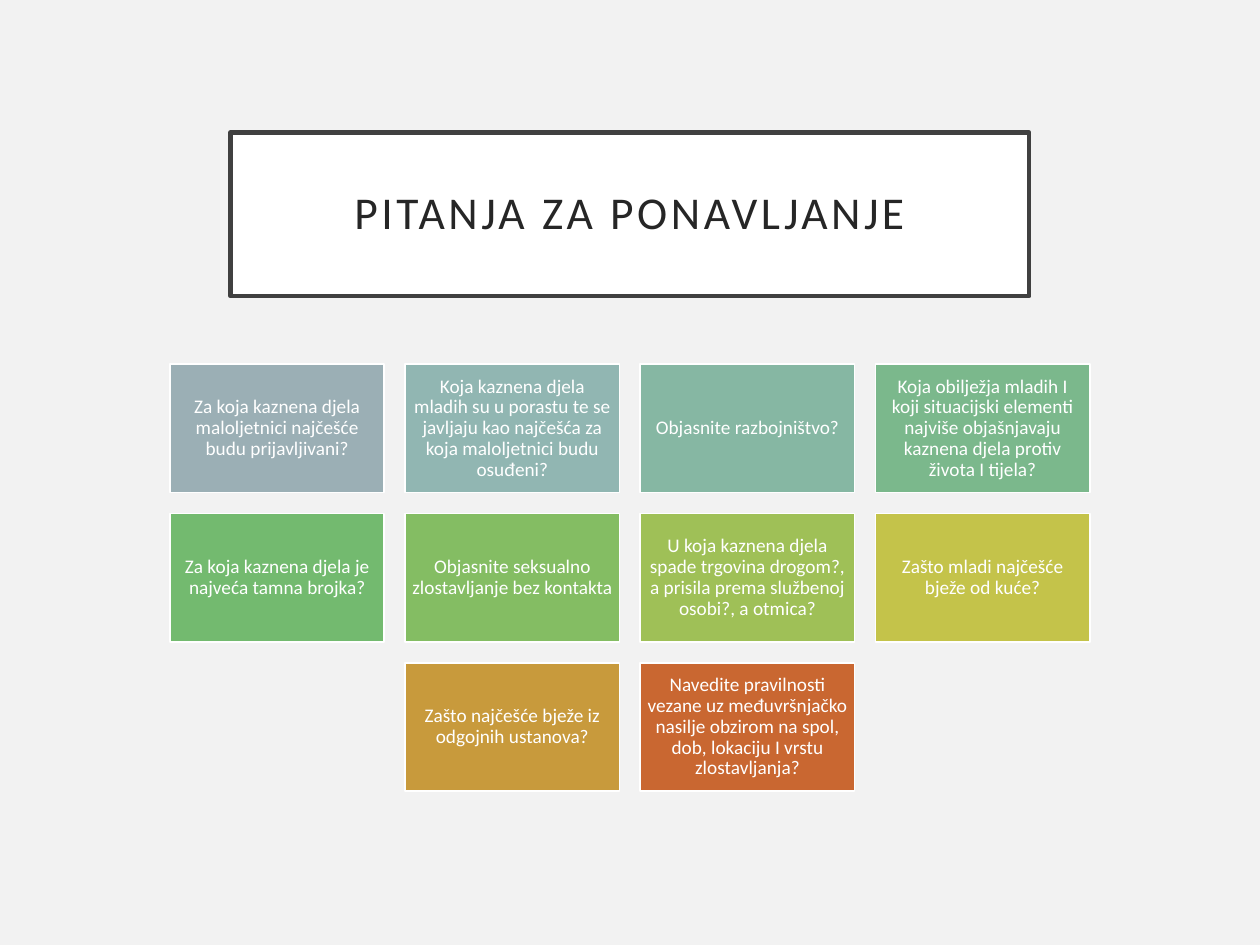
from pptx import Presentation
from pptx.dml.color import RGBColor
from pptx.enum.shapes import MSO_SHAPE
from pptx.enum.text import MSO_ANCHOR, MSO_AUTO_SIZE, PP_ALIGN
from pptx.util import Cm, Pt

RECT = MSO_SHAPE.RECTANGLE
MIDDLE = MSO_ANCHOR.MIDDLE
CENTER = PP_ALIGN.CENTER
NO_FIT = MSO_AUTO_SIZE.NONE

# Content: rows of (question, fill)
TITLE = "PITANJA ZA PONAVLJANJE"
ROWS = [
    [
        ("Za koja kaznena djela maloljetnici najčešće budu prijavljivani?", "9BAFB5"),
        ("Koja kaznena djela mladih su u porastu te se javljaju kao najčešća "
         "za koja maloljetnici budu osuđeni?", "91B6B2"),
        ("Objasnite razbojništvo?", "86B7A3"),
        ("Koja obilježja mladih I koji situacijski elementi najviše "
         "objašnjavaju kaznena djela protiv života I tijela?", "7BB88C"),
    ],
    [
        ("Za koja kaznena djela je najveća tamna brojka?", "73BA6F"),
        ("Objasnite seksualno zlostavljanje bez kontakta", "84BD63"),
        ("U koja kaznena djela spade trgovina drogom?, a prisila prema "
         "službenoj osobi?, a otmica?", "9FC057"),
        ("Zašto mladi najčešće bježe od kuće?", "C4C34A"),
    ],
    [
        ("Zašto najčešće bježe iz odgojnih ustanova?", "C89A3C"),
        ("Navedite pravilnosti vezane uz međuvršnjačko nasilje obzirom na "
         "spol, dob, lokaciju I vrstu zlostavljanja?", "C96731"),
    ],
]

# Sizes in centimetres
PAGE_W, PAGE_H = 25.4, 19.05
CARD_W, CARD_H, GAP = 4.32, 2.59, 0.42
TOP = 7.34


def color(code):
    return RGBColor.from_string(code)


def paint(shape, fill, line, width):
    shape.fill.solid()
    shape.fill.fore_color.rgb = color(fill)
    shape.line.color.rgb = color(line)
    shape.line.width = Pt(width)
    shape.shadow.inherit = False


def write(shape, text, size=11, tint="FFFFFF", inset=0.13, track=0):
    frame = shape.text_frame
    frame.word_wrap = True
    frame.auto_size = NO_FIT
    frame.vertical_anchor = MIDDLE
    frame.margin_left = frame.margin_right = Cm(inset)
    frame.margin_top = frame.margin_bottom = Cm(inset)
    par = frame.paragraphs[0]
    par.alignment = CENTER
    par.line_spacing = 0.9
    par.space_before = Pt(0)
    run = par.add_run()
    run.text = text
    run.font.name = "Calibri"
    run.font.size = Pt(size)
    run.font.color.rgb = color(tint)
    if track:
        run.font._element.set("spc", str(track * 100))


def main():
    deck = Presentation()
    deck.slide_width, deck.slide_height = Cm(PAGE_W), Cm(PAGE_H)
    slide = deck.slides.add_slide(deck.slide_layouts[5])
    slide.background.fill.solid()
    slide.background.fill.fore_color.rgb = color("F2F2F2")

    # Framed title
    title = slide.shapes.title
    title.left, title.top = Cm(4.65), Cm(2.67)
    title.width, title.height = Cm(16.1), Cm(3.3)
    paint(title, "FFFFFF", "404040", 2.5)
    write(title, TITLE, size=26, tint="262626", inset=0.5, track=2)

    # Question cards, each row centred on the slide
    for i, row in enumerate(ROWS):
        span = len(row) * (CARD_W + GAP) - GAP
        left = (PAGE_W - span) / 2
        y = TOP + i * (CARD_H + GAP)
        for j, (text, fill) in enumerate(row):
            x = left + j * (CARD_W + GAP)
            card = slide.shapes.add_shape(RECT, Cm(x), Cm(y), Cm(CARD_W), Cm(CARD_H))
            paint(card, fill, "FFFFFF", 1)
            write(card, text)

    deck.save("out.pptx")


if __name__ == "__main__":
    main()
